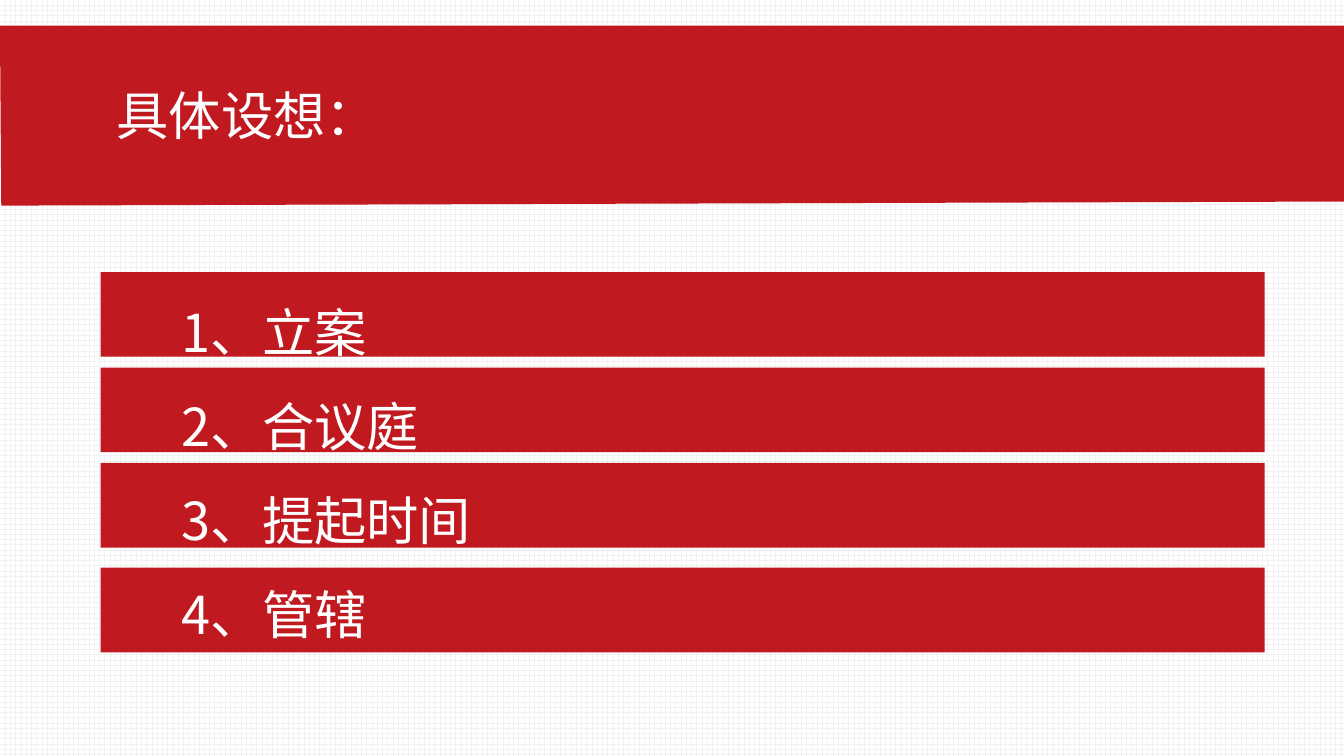
from typing import NamedTuple

from lxml.etree import SubElement
from pptx import Presentation
from pptx.dml.color import RGBColor
from pptx.enum.dml import MSO_PATTERN
from pptx.enum.shapes import MSO_SHAPE
from pptx.enum.text import MSO_AUTO_SIZE
from pptx.oxml.ns import qn
from pptx.shapes.base import BaseShape
from pptx.slide import Slide
from pptx.util import Inches, Pt

RED = RGBColor(0xC1, 0x19, 0x20)
WHITE = RGBColor(0xFF, 0xFF, 0xFF)
GRID_GREY = RGBColor(0xF2, 0xF2, 0xF2)
FONT_NAME = "Noto Sans CJK SC"
SLIDE_WIDTH = Inches(10)
SLIDE_HEIGHT = SLIDE_WIDTH * 9 // 16
BAR_LEFT, BAR_WIDTH, BAR_HEIGHT = 0.75, 8.66, 0.63


class Topic(NamedTuple):
    text: str
    bar_middle: float


TOPICS = [
    Topic("1、立案", 2.34),
    Topic("2、合议庭", 3.05),
    Topic("3、提起时间", 3.76),
    Topic("4、管辖", 4.54),
]
BANNER_CORNERS = [(0, 0.19), (10, 0.19), (10, 1.5), (0.01, 1.53)]


def paint_red(shape: BaseShape) -> None:
    shape.shadow.inherit = False
    shape.fill.solid()
    shape.fill.fore_color.rgb = RED
    shape.line.fill.background()


def add_banner(slide: Slide) -> None:
    start, *corners = [(Inches(x), Inches(y)) for x, y in BANNER_CORNERS]
    builder = slide.shapes.build_freeform(*start)
    builder.add_line_segments(corners, close=True)
    paint_red(builder.convert_to_shape())


def add_bar(slide: Slide, topic: Topic) -> None:
    paint_red(slide.shapes.add_shape(
        MSO_SHAPE.RECTANGLE, Inches(BAR_LEFT),
        Inches(topic.bar_middle - BAR_HEIGHT / 2),
        Inches(BAR_WIDTH), Inches(BAR_HEIGHT)))


def add_text(slide: Slide, text: str, *, left: float, top: float, width: float,
             height: float, indent: float, line_spacing: float = 1.0) -> None:
    box = slide.shapes.add_textbox(
        Inches(left), Inches(top), Inches(width), Inches(height))
    frame = box.text_frame
    frame.word_wrap = True
    frame.auto_size = MSO_AUTO_SIZE.SHAPE_TO_FIT_TEXT
    frame.text = text
    for paragraph in frame.paragraphs:
        paragraph.line_spacing = line_spacing
        properties = paragraph._p.get_or_add_pPr()
        properties.set("marL", "0")
        properties.set("indent", str(Inches(indent)))
        for run in paragraph.runs:
            run.font.size = Pt(28)
            run.font.name = FONT_NAME
            run.font.color.rgb = WHITE
            SubElement(run.font._element, qn("a:ea"), typeface=FONT_NAME)


def main() -> None:
    """Build the slide with a red title banner and four topic bars."""
    presentation = Presentation()
    presentation.slide_width = SLIDE_WIDTH
    presentation.slide_height = SLIDE_HEIGHT
    slide = presentation.slides.add_slide(presentation.slide_layouts[6])

    background = slide.background.fill
    background.patterned()
    background.pattern = MSO_PATTERN.LARGE_GRID
    background.fore_color.rgb = GRID_GREY
    background.back_color.rgb = WHITE

    for topic in TOPICS:
        add_bar(slide, topic)
    add_banner(slide)
    add_text(slide, "具体设想：", left=0.42, top=0.57, width=9.15, height=0.57,
             indent=0.35)
    add_text(slide, "\n".join(topic.text for topic in TOPICS), left=0.75, top=1.95,
             width=9.39, height=2.85, indent=0.5, line_spacing=1.5)
    presentation.save("out.pptx")


if __name__ == "__main__":
    main()
